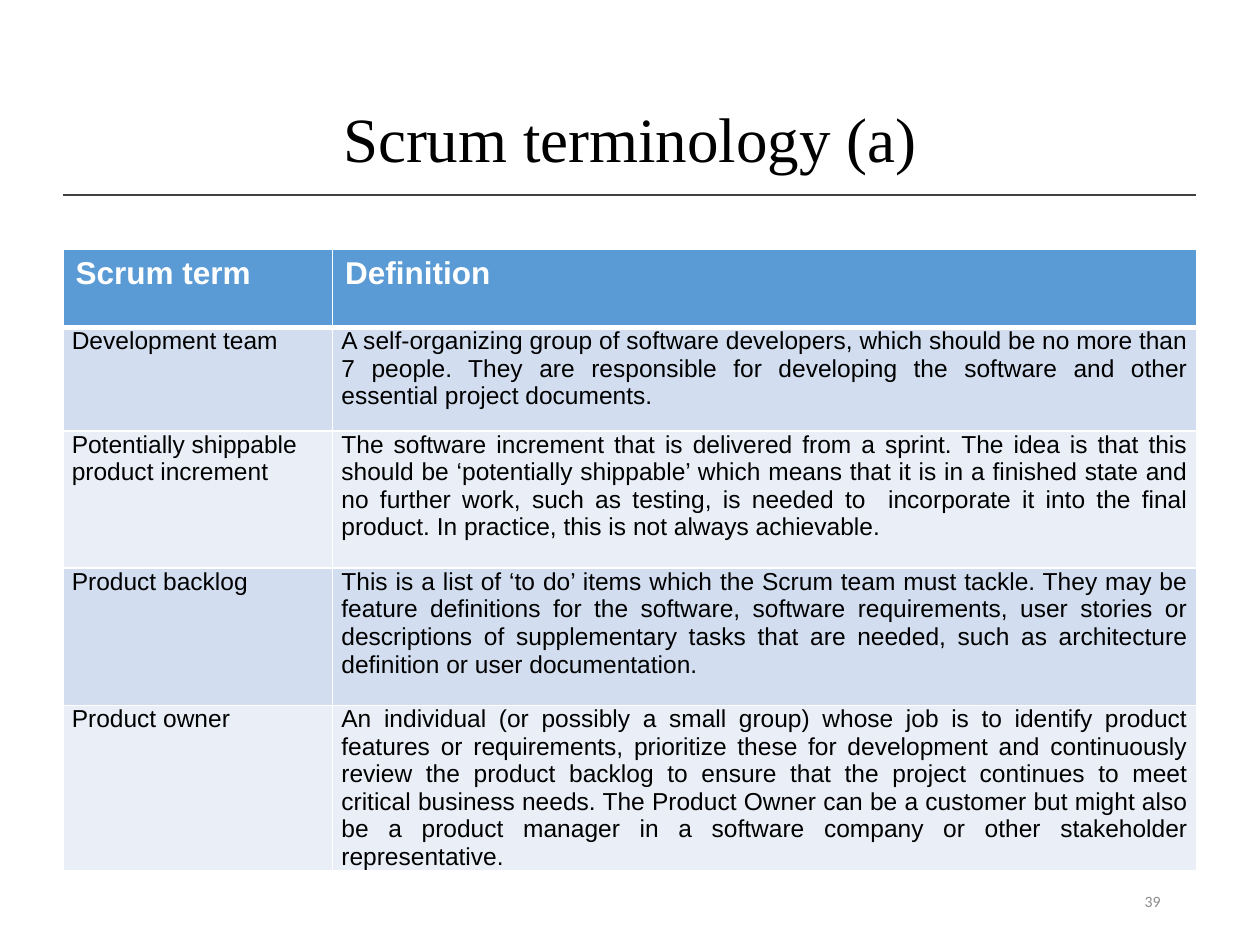
from lxml.etree import SubElement
from pptx import Presentation
from pptx.dml.color import RGBColor
from pptx.enum.shapes import MSO_CONNECTOR
from pptx.enum.text import MSO_ANCHOR, MSO_AUTO_SIZE, PP_ALIGN
from pptx.oxml.ns import qn
from pptx.util import Inches, Pt

TITLE = "Scrum terminology (a)"
PAGE_NUMBER = "39"
HEADINGS = ("Scrum term", "Definition")
TERMS = [
    ("Development team",
     "A self-organizing group of software developers, which should be no more than 7 people. "
     "They are responsible for developing the software and other essential project documents."),
    ("Potentially shippable product increment",
     "The software increment that is delivered from a sprint. The idea is that this should be "
     "‘potentially shippable’ which means that it is in a finished state and no further work, "
     "such as testing, is needed to  incorporate it into the final product. In practice, this "
     "is not always achievable."),
    ("Product backlog",
     "This is a list of ‘to do’ items which the Scrum team must tackle. They may be feature "
     "definitions for the software, software requirements, user stories or descriptions of "
     "supplementary tasks that are needed, such as architecture definition or user "
     "documentation."),
    ("Product owner",
     "An individual (or possibly a small group) whose job is to identify product features or "
     "requirements, prioritize these for development and continuously review the product "
     "backlog to ensure that the project continues to meet critical business needs. The "
     "Product Owner can be a customer but might also be a product manager in a software "
     "company or other stakeholder representative."),
]
COLUMN_WIDTHS = (2.14, 6.86)
ROW_HEIGHTS = (0.62, 0.82, 1.09, 1.09, 1.31)
COLORS = {"black": "000000", "white": "FFFFFF", "rule": "404040", "number": "8C8C8C",
          "header": "5B9BD5", "odd": "D2DEEF", "even": "EAEFF7"}


def rgb(name):
    return RGBColor.from_string(COLORS[name])


def format_text(para, font_name, size, color, bold=False, align=PP_ALIGN.LEFT):
    para.alignment = align
    for span in para.runs:
        font = span.font
        font.name, font.size, font.bold = font_name, Pt(size), bold
        font.color.rgb = rgb(color)


def place(box, left, top, width, height):
    box.left, box.top = Inches(left), Inches(top)
    box.width, box.height = Inches(width), Inches(height)


def set_borders(cell, widths):
    """Draw white cell edges; widths maps L, R, T and B to points."""
    properties = cell._tc.get_or_add_tcPr()
    for index, (side, width) in enumerate(widths.items()):
        edge = SubElement(properties, qn(f"a:ln{side}"), w=str(Pt(width)))
        fill = SubElement(edge, qn("a:solidFill"))
        SubElement(fill, qn("a:srgbClr"), val=COLORS["white"])
        properties.insert(index, edge)


def add_title(page):
    title = page.shapes.title
    place(title, 0.69, 0.4, 8.62, 1.45)
    frame = title.text_frame
    frame.text = TITLE
    frame.auto_size = MSO_AUTO_SIZE.NONE
    frame.vertical_anchor = MSO_ANCHOR.MIDDLE
    para = frame.paragraphs[0]
    para.line_spacing = 0.9
    format_text(para, "Times New Roman", 36, "black", align=PP_ALIGN.CENTER)


def add_rule(page):
    rule = page.shapes.add_connector(MSO_CONNECTOR.STRAIGHT, Inches(0.5), Inches(1.55),
                                     Inches(9.49), Inches(1.55))
    rule.line.color.rgb = rgb("rule")
    rule.line.width = Pt(1)
    SubElement(rule._element.spPr, qn("a:effectLst"))


def add_terms_table(page):
    rows = [HEADINGS, *TERMS]
    table = page.shapes.add_table(len(rows), len(HEADINGS), Inches(0.5), Inches(1.98),
                                  Inches(sum(COLUMN_WIDTHS)), Inches(sum(ROW_HEIGHTS))).table
    for column, width in zip(table.columns, COLUMN_WIDTHS):
        column.width = Inches(width)
    for row_index, (row, height) in enumerate(zip(rows, ROW_HEIGHTS)):
        table.rows[row_index].height = Inches(height)
        is_header = row_index == 0
        band = "header" if is_header else ("even", "odd")[row_index % 2]
        for column_index, text in enumerate(row):
            cell = table.cell(row_index, column_index)
            cell.text_frame.text = text
            para = cell.text_frame.paragraphs[0]
            if is_header:
                format_text(para, "Arial", 18, "white", bold=True)
            else:
                cell.margin_left = cell.margin_right = Inches(0.07)
                cell.margin_top = cell.margin_bottom = 0
                align = PP_ALIGN.JUSTIFY if column_index else PP_ALIGN.LEFT
                format_text(para, "Arial", 14, "black", align=align)
            cell.fill.solid()
            cell.fill.fore_color.rgb = rgb(band)
            set_borders(cell, {"L": 1, "R": 1, "T": 3 if row_index == 1 else 1,
                               "B": 3 if is_header else 1})


def add_page_number(page):
    box = page.shapes.add_textbox(0, 0, 0, 0)
    place(box, 7.06, 6.95, 2.25, 0.4)
    frame = box.text_frame
    frame.word_wrap = True
    frame.vertical_anchor = MSO_ANCHOR.MIDDLE
    frame.text = PAGE_NUMBER
    format_text(frame.paragraphs[0], "Calibri", 9, "number", align=PP_ALIGN.RIGHT)


def main():
    deck = Presentation()
    deck.slide_width, deck.slide_height = Inches(10), Inches(7.5)
    page = deck.slides.add_slide(deck.slide_layouts.get_by_name("Title Only"))
    add_rule(page)
    add_title(page)
    add_terms_table(page)
    add_page_number(page)
    deck.save("out.pptx")


if __name__ == "__main__":
    main()
